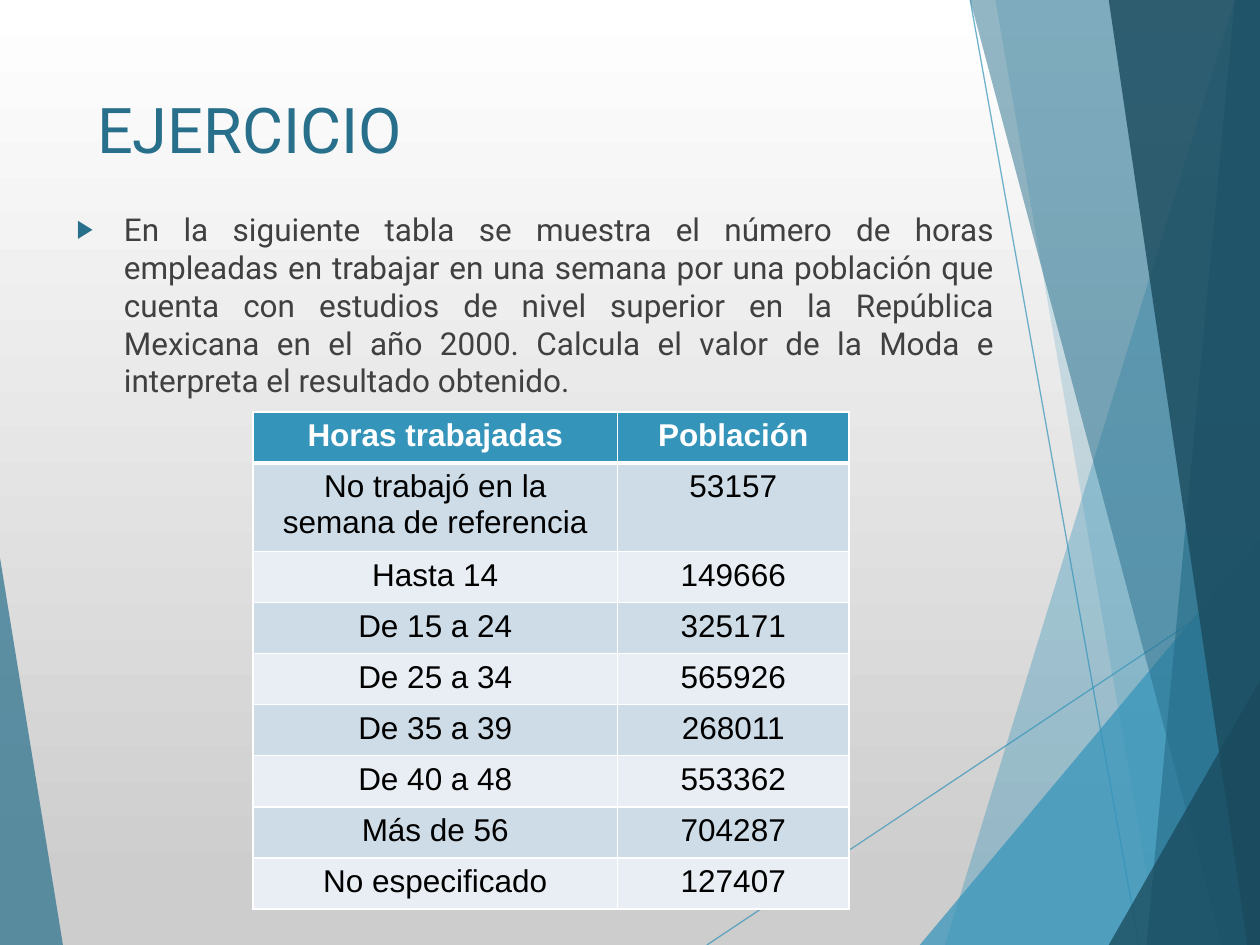
from lxml.etree import SubElement
from pptx import Presentation
from pptx.dml.color import RGBColor
from pptx.enum.shapes import MSO_CONNECTOR
from pptx.enum.text import MSO_ANCHOR, MSO_AUTO_SIZE, PP_ALIGN
from pptx.oxml.ns import qn
from pptx.util import Inches, Pt

COLORS = {
    "sky": "3494BA", "teal": "276F8B", "deep": "1A4A5D",
    "white": "FFFFFF", "silver": "CDCDCD", "text": "404040",
    "black": "000000", "band_dark": "CEDCE7", "band_light": "E8EEF3",
}


def paint(fill, color, opacity=100):
    """Make a fill solid, with opacity in percent."""
    fill.solid()
    fill.fore_color.rgb = RGBColor.from_string(COLORS[color])
    if opacity < 100:
        tint = fill._xPr.find(qn("a:solidFill"))[0]
        SubElement(tint, qn("a:alpha"), val=str(opacity * 1000))


def add_border(cell, side, points):
    """Add a white border; call for sides in the order L, R, T, B, before the fill."""
    edge = SubElement(cell._tc.get_or_add_tcPr(), qn(f"a:ln{side}"), w=str(Pt(points)))
    solid = SubElement(edge, qn("a:solidFill"))
    SubElement(solid, qn("a:srgbClr"), val=COLORS["white"])


deck = Presentation()
deck.slide_width, deck.slide_height = Inches(10), Inches(7.5)
column, row = deck.slide_width / 100, deck.slide_height / 100
page = deck.slides.add_slide(deck.slide_layouts[5])

# Background gradient, from top to bottom
backdrop = page.background.fill
backdrop.gradient()
backdrop.gradient_angle = 270
for stop, color, position in zip(backdrop.gradient_stops, ("white", "silver"), (0, 0.94)):
    stop.color.rgb = RGBColor.from_string(COLORS[color])
    stop.position = position

# Thin lines and facets, in hundredths of the slide's width and height
for x1, y1, x2, y2 in ((56.1, 100, 100, 61), (77, 0, 90.4, 100)):
    line = page.shapes.add_connector(
        MSO_CONNECTOR.STRAIGHT,
        round(x1 * column), round(y1 * row), round(x2 * column), round(y2 * row))
    paint(line.line.fill, "sky", 70)
    line.line.width = Pt(0.75)
    SubElement(line._element.spPr, qn("a:effectLst"))

facets = [
    ("sky", 36, [(97.5, 0), (75.4, 100), (100, 100), (100, 0)]),
    ("sky", 20, [(78.8, 0), (91.9, 100), (100, 100), (100, 0)]),
    ("sky", 72, [(72.6, 100), (100, 57.2), (100, 100)]),
    ("teal", 50, [(76.7, 0), (97, 100), (100, 100), (100, 0)]),
    ("teal", 66, [(98.1, 0), (90.7, 100), (100, 100), (100, 0)]),
    ("deep", 80, [(88.5, 0), (98.8, 100), (100, 100), (100, 0)]),
    ("deep", 76, [(88.2, 100), (100, 71.5), (100, 100)]),
    ("teal", 70, [(0, 59.3), (4.9, 100), (0, 100)]),
]
for color, opacity, points in facets:
    builder = page.shapes.build_freeform(*points[0], scale=(column, row))
    builder.add_line_segments(points[1:], close=True)
    facet = builder.convert_to_shape()
    paint(facet.fill, color, opacity)
    facet.line.fill.background()
    facet.shadow.inherit = False

# Title
title = page.shapes.title
title.left, title.top = round(6.7 * column), round(8.9 * row)
title.width, title.height = round(69.4 * column), round(19.2 * row)
title.text_frame.text = "EJERCICIO"
title.text_frame.vertical_anchor = MSO_ANCHOR.TOP
title.text_frame.auto_size = MSO_AUTO_SIZE.NONE
heading = title.text_frame.paragraphs[0]
heading.alignment = PP_ALIGN.LEFT
heading.font.name, heading.font.size = "Roboto", Pt(36)
heading.font.color.rgb = RGBColor.from_string(COLORS["teal"])

# Exercise statement
box = page.shapes.add_textbox(
    round(5.1 * column), round(21.6 * row), round(74.8 * column), round(69.3 * row))
box.text_frame.word_wrap = True
para = box.text_frame.paragraphs[0]
para.text = (
    "En la siguiente tabla se muestra el número de horas empleadas en trabajar "
    "en una semana por una población que cuenta con estudios de nivel superior "
    "en la República Mexicana en el año 2000. Calcula el valor de la Moda e "
    "interpreta el resultado obtenido.")
para.alignment = PP_ALIGN.JUSTIFY
para.space_before = Pt(10)
para.font.name, para.font.size = "Roboto", Pt(18)
para.font.color.rgb = RGBColor.from_string(COLORS["text"])
settings = para._p.get_or_add_pPr()
settings.set("marL", str(Pt(27)))
settings.set("indent", str(-Pt(27)))
bullet = [
    SubElement(settings, qn("a:buClr")),
    SubElement(settings, qn("a:buSzPct"), val="80000"),
    SubElement(settings, qn("a:buFont"), typeface="Arial"),
    SubElement(settings, qn("a:buChar"), char="▶"),
]
SubElement(bullet[0], qn("a:srgbClr"), val=COLORS["teal"])
settings.append(settings.find(qn("a:defRPr")))  # the schema puts defRPr after bullets

# Hours table
hours = [
    ("Horas trabajadas", "Población"),
    ("No trabajó en la semana de referencia", "53157"),
    ("Hasta 14", "149666"),
    ("De 15 a 24", "325171"),
    ("De 25 a 34", "565926"),
    ("De 35 a 39", "268011"),
    ("De 40 a 48", "553362"),
    ("Más de 56", "704287"),
    ("No especificado", "127407"),
]
row_height = Pt(29.2)
table = page.shapes.add_table(
    len(hours), 2, round(20.1 * column), round(43.6 * row),
    round(47.3 * column), row_height * len(hours)).table
for table_column, share in zip(table.columns, (28.9, 18.4)):
    table_column.width = round(share * column)
for r, values in enumerate(hours):
    table.rows[r].height = row_height
    header = r == 0
    band = "sky" if header else ("band_dark" if r % 2 else "band_light")
    for c, value in enumerate(values):
        cell = table.cell(r, c)
        for side in "LRTB":
            thick = (header and side == "B") or (r == 1 and side == "T")
            add_border(cell, side, 3 if thick else 1)
        paint(cell.fill, band)
        cell.text = value
        entry = cell.text_frame.paragraphs[0]
        entry.alignment = PP_ALIGN.CENTER
        entry.font.name, entry.font.size, entry.font.bold = "Arial", Pt(18), header
        entry.font.color.rgb = RGBColor.from_string(COLORS["white" if header else "black"])

deck.save("out.pptx")
